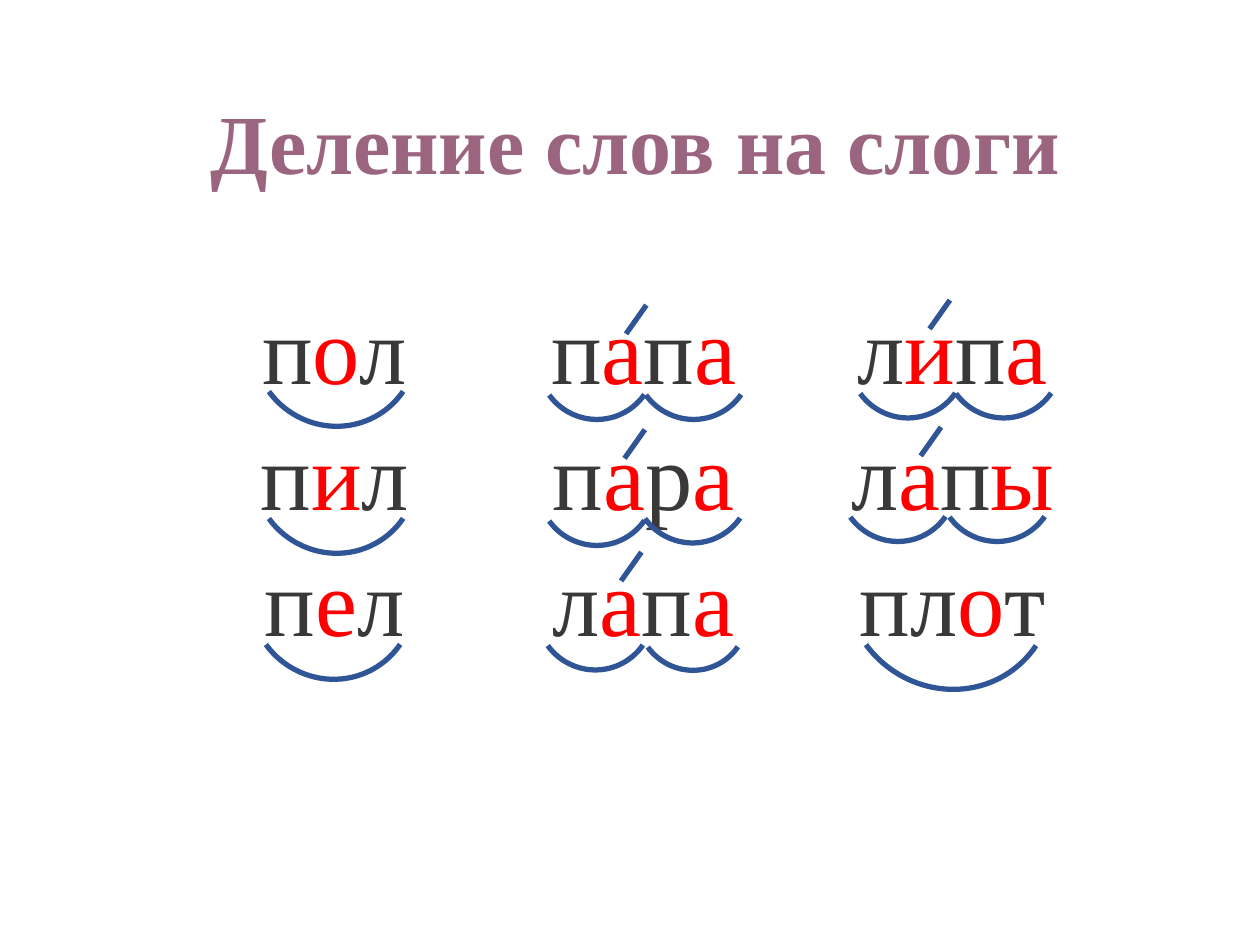
import dataclasses
import itertools

import pptx
import pptx.dml.color
import pptx.enum.shapes
import pptx.enum.text
import pptx.oxml.ns
import pptx.util
from lxml import etree

Cm = pptx.util.Cm


@dataclasses.dataclass(frozen=True)
class Theme:
    font: str = "Times New Roman"
    title: str = "9B6580"
    consonant: str = "3B3838"
    vowel: str = "FF0000"
    line: str = "2F5597"
    title_size: int = 48
    word_size: int = 54
    line_width: int = 3


THEME = Theme()
VOWELS = "аеиоы"
WORDS = [
    ["пол", "папа", "липа"],
    ["пил", "пара", "лапы"],
    ["пел", "лапа", "плот"],
]
SYLLABLE_ARCS = {
    (3.28, 3.35): [(5.11, 5.26), (5.11, 7.82), (5.05, 10.36)],
    (2.34, 2.36): [
        (10.85, 6.1), (12.8, 6.1), (17.12, 6.07), (19.05, 6.07),
        (10.85, 8.64), (12.78, 8.59), (16.92, 8.56), (18.92, 8.56),
        (10.82, 11.15),
    ],
    (2.21, 2.24): [(12.85, 11.28)],
    (4.11, 4.29): [(17.07, 9.65)],
}
STRESS_MARKS = [
    (13.03, 6.15), (19.15, 6.05),
    (13.0, 8.66), (18.97, 8.61),
    (12.93, 11.13),
]


def rgb(value):
    return pptx.dml.color.RGBColor.from_string(value)


def add_run(p, text, *, size, color, bold=False):
    r = p.add_run()
    r.text = text
    r.font.name = THEME.font
    r.font.size = pptx.util.Pt(size)
    r.font.bold = bold
    r.font.color.rgb = rgb(color)


def style_line(line):
    line.color.rgb = rgb(THEME.line)
    line.width = pptx.util.Pt(THEME.line_width)


def add_title(s, text):
    tf = s.shapes.add_textbox(Cm(3.48), Cm(1.7), Cm(18.67), Cm(2.31)).text_frame
    tf.word_wrap = True
    p = tf.paragraphs[0]
    p.alignment = pptx.enum.text.PP_ALIGN.CENTER
    add_run(p, text, size=THEME.title_size, color=THEME.title, bold=True)


def add_word(cell, word):
    cell.fill.background()
    p = cell.text_frame.paragraphs[0]
    p.alignment = pptx.enum.text.PP_ALIGN.CENTER
    for is_vowel, letters in itertools.groupby(word, lambda c: c in VOWELS):
        color = THEME.vowel if is_vowel else THEME.consonant
        add_run(p, "".join(letters), size=THEME.word_size, color=color)


def add_words(s, words):
    table = s.shapes.add_table(
        len(words), len(words[0]), Cm(3.63), Cm(5.92), Cm(18.69), Cm(7.62)
    ).table
    table.first_row = False
    table.horz_banding = False
    for i, row in enumerate(words):
        for j, word in enumerate(row):
            add_word(table.cell(i, j), word)


def add_arc(s, left, top, width, height):
    sp = s.shapes.add_shape(
        pptx.enum.shapes.MSO_SHAPE.ARC, Cm(left), Cm(top), Cm(width), Cm(height)
    )
    sp.adjustments[0] = 154.96
    sp.adjustments[1] = 4.65
    sp.rotation = 136.5
    sp.shadow.inherit = False
    sp.fill.background()
    style_line(sp.line)


def add_stress(s, x, y):
    sp = s.shapes.add_connector(
        pptx.enum.shapes.MSO_CONNECTOR.STRAIGHT,
        Cm(x), Cm(y), Cm(x - 0.41), Cm(y + 0.58),
    )
    style_line(sp.line)
    etree.SubElement(sp._element.spPr, pptx.oxml.ns.qn("a:effectLst"))


def main():
    prs = pptx.Presentation()
    prs.slide_width = Cm(25.4)
    prs.slide_height = Cm(19.05)
    s = prs.slides.add_slide(prs.slide_layouts[6])
    add_title(s, "Деление слов на слоги")
    add_words(s, WORDS)
    for size, places in SYLLABLE_ARCS.items():
        for place in places:
            add_arc(s, *place, *size)
    for place in STRESS_MARKS:
        add_stress(s, *place)
    prs.save("out.pptx")


if __name__ == "__main__":
    main()
